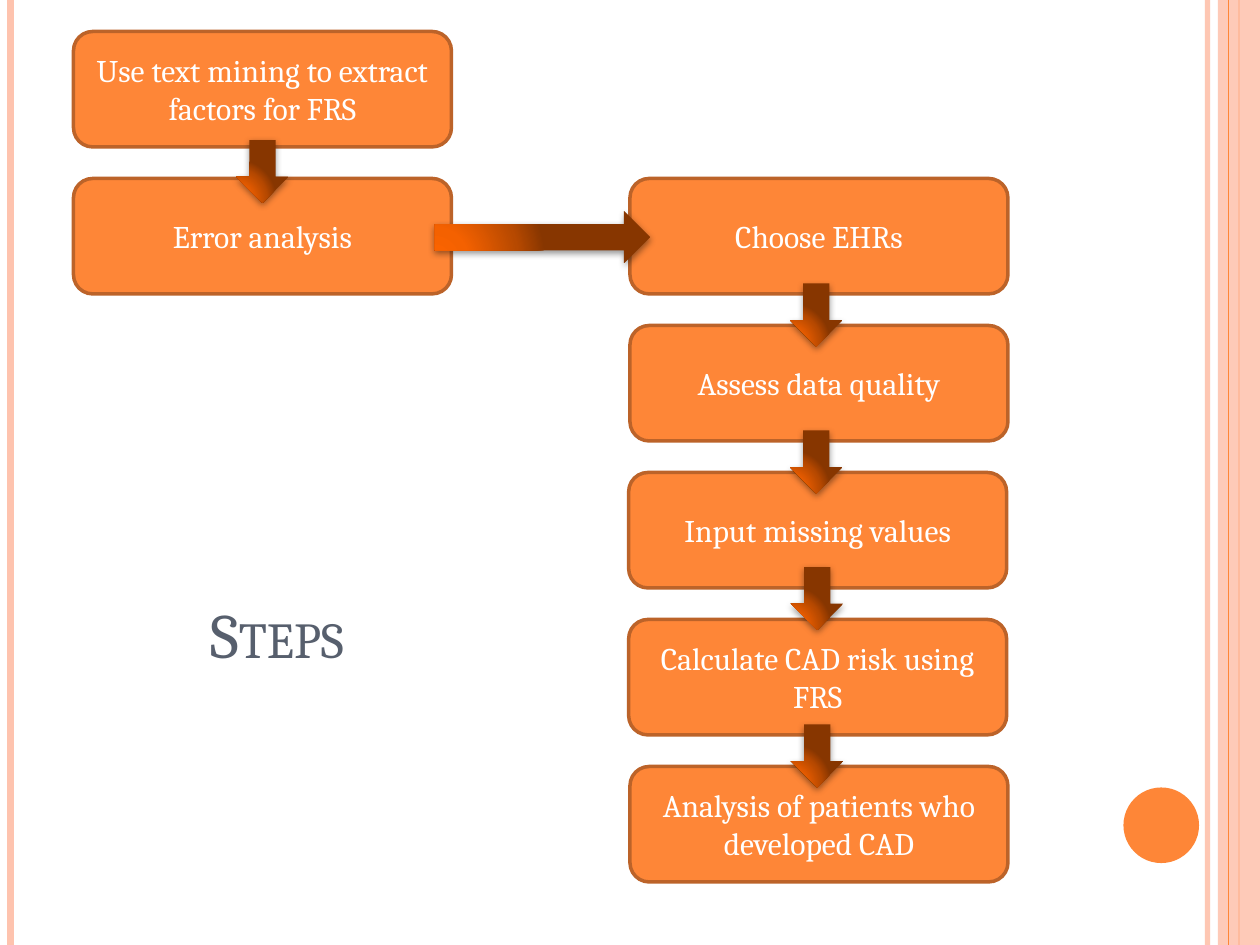
from lxml import etree
from pptx import Presentation
from pptx import util as u
from pptx.dml.color import RGBColor
from pptx.enum import shapes, text
from pptx.oxml import parse_xml
from pptx.oxml.ns import nsdecls, qn

ORANGE = RGBColor(0xFE, 0x86, 0x37)
BROWN = RGBColor(0xBC, 0x63, 0x29)
PEACH = RGBColor(0xFE, 0xC3, 0xAE)
SLATE = RGBColor(0x57, 0x5F, 0x6D)
WHITE = RGBColor(0xFF, 0xFF, 0xFF)
ARROW_STOPS = ((0, "FD6400"), (30, "F46100"), (75, "B74900"), (100, "873600"))

PAGE_WIDTH, PAGE_HEIGHT = 720, 540
BOX_WIDTH, BOX_HEIGHT = 216, 66
FIRST_TOP, ROW_PITCH = 18, 84
LEFT_COLUMN, RIGHT_COLUMN = 42, 360
ARROW_WIDTH, ARROW_HEIGHT = 30, 36

STEPS = [  # text, left, row
    ("Use text mining to extract factors for FRS", LEFT_COLUMN, 0),
    ("Error analysis", LEFT_COLUMN, 1),
    ("Choose EHRs", RIGHT_COLUMN, 1),
    ("Assess data quality", RIGHT_COLUMN, 2),
    ("Input missing values", RIGHT_COLUMN - 0.75, 3),
    ("Calculate CAD risk using FRS", RIGHT_COLUMN - 0.75, 4),
    ("Analysis of patients who developed CAD", RIGHT_COLUMN, 5),
]
DOWN_ARROWS = [(135, 80), (451.5, 162), (451.5, 246), (452, 324), (452, 414)]
RULES = [(690, 3, PEACH, 93), (6, 4.5, PEACH, 100), (708, 1.5, ORANGE, 100)]


def write(shape, words, size=18, color=WHITE, align=text.PP_ALIGN.CENTER,
          anchor=text.MSO_ANCHOR.MIDDLE, small_caps=False):
    frame = shape.text_frame
    frame.word_wrap = True
    frame.auto_size = text.MSO_AUTO_SIZE.NONE
    frame.vertical_anchor = anchor
    para = frame.paragraphs[0]
    para.alignment = align
    span = para.add_run()
    span.text = words
    span.font.name = "Cambria"
    span.font.size = u.Pt(size)
    span.font.color.rgb = color
    if small_caps:
        span.font._element.set("cap", "small")


def set_opacity(holder, percent):
    """Give the first colour inside an element an alpha value."""
    color = next(holder.iter(qn("a:srgbClr")))
    etree.SubElement(color, qn("a:alpha")).set("val", str(percent * 1000))


class Page:
    def __init__(self, deck):
        self.slide = deck.slides.add_slide(deck.slide_layouts[5])

    def title(self, words, left, top, width, height):
        title = self.slide.shapes.title
        title.left, title.top = u.Pt(left), u.Pt(top)
        title.width, title.height = u.Pt(width), u.Pt(height)
        write(title, words, size=36, color=SLATE, align=text.PP_ALIGN.LEFT,
              anchor=text.MSO_ANCHOR.BOTTOM, small_caps=True)

    def shape(self, kind, left, top, width, height, fill=ORANGE):
        shape = self.slide.shapes.add_shape(
            kind, u.Pt(left), u.Pt(top), u.Pt(width), u.Pt(height))
        shape.shadow.inherit = False
        shape.fill.solid()
        shape.fill.fore_color.rgb = fill
        shape.line.fill.background()
        return shape

    def step(self, words, left, row):
        box = self.shape(shapes.MSO_SHAPE.ROUNDED_RECTANGLE, left,
                         FIRST_TOP + row * ROW_PITCH, BOX_WIDTH, BOX_HEIGHT)
        box.line.color.rgb = BROWN
        box.line.width = u.Pt(2)
        write(box, words)

    def arrow(self, left, top, height=ARROW_HEIGHT, rotation=0):
        arrow = self.shape(shapes.MSO_SHAPE.DOWN_ARROW, left, top,
                           ARROW_WIDTH, height)
        arrow.rotation = rotation
        stops = "".join(
            f'<a:gs pos="{place * 1000}"><a:srgbClr val="{color}"/></a:gs>'
            for place, color in ARROW_STOPS)
        gradient = parse_xml(
            f'<a:gradFill {nsdecls("a")} rotWithShape="1"><a:gsLst>{stops}</a:gsLst>'
            '<a:path path="circle"><a:fillToRect l="5000" t="100000" '
            'r="120000" b="10000"/></a:path></a:gradFill>')
        properties = arrow._element.spPr
        properties.replace(properties.find(qn("a:solidFill")), gradient)
        shadow = parse_xml(
            f'<a:outerShdw {nsdecls("a")} blurRad="{u.Pt(4)}" dist="{u.Pt(1.6)}" '
            'dir="5400000" rotWithShape="0"><a:srgbClr val="000000">'
            '<a:alpha val="42000"/></a:srgbClr></a:outerShdw>')
        properties.find(qn("a:effectLst")).append(shadow)

    def vertical_rule(self, x, width, color, opacity=100):
        rule = self.slide.shapes.add_connector(
            shapes.MSO_CONNECTOR.STRAIGHT, u.Pt(x), 0, u.Pt(x), u.Pt(PAGE_HEIGHT))
        rule.line.color.rgb = color
        rule.line.width = u.Pt(width)
        properties = rule._element.spPr
        if opacity < 100:
            set_opacity(properties, opacity)
        etree.SubElement(properties, qn("a:effectLst"))


def main():
    deck = Presentation()
    deck.slide_width, deck.slide_height = u.Pt(PAGE_WIDTH), u.Pt(PAGE_HEIGHT)
    page = Page(deck)

    for rule in RULES:
        page.vertical_rule(*rule)
    band = page.shape(shapes.MSO_SHAPE.RECTANGLE, 696, 0, 24, PAGE_HEIGHT, PEACH)
    set_opacity(band._element.spPr, 87)
    page.vertical_rule(702, 0.75, ORANGE)
    page.shape(shapes.MSO_SHAPE.OVAL, 642, 450, 43.2, 43.2)

    for step in STEPS:
        page.step(*step)
    for left, top in DOWN_ARROWS:
        page.arrow(left, top)
    page.arrow(295, 74, height=123, rotation=270)
    page.title("Steps", 113, 297, 135, 90)

    deck.save("out.pptx")


if __name__ == "__main__":
    main()
